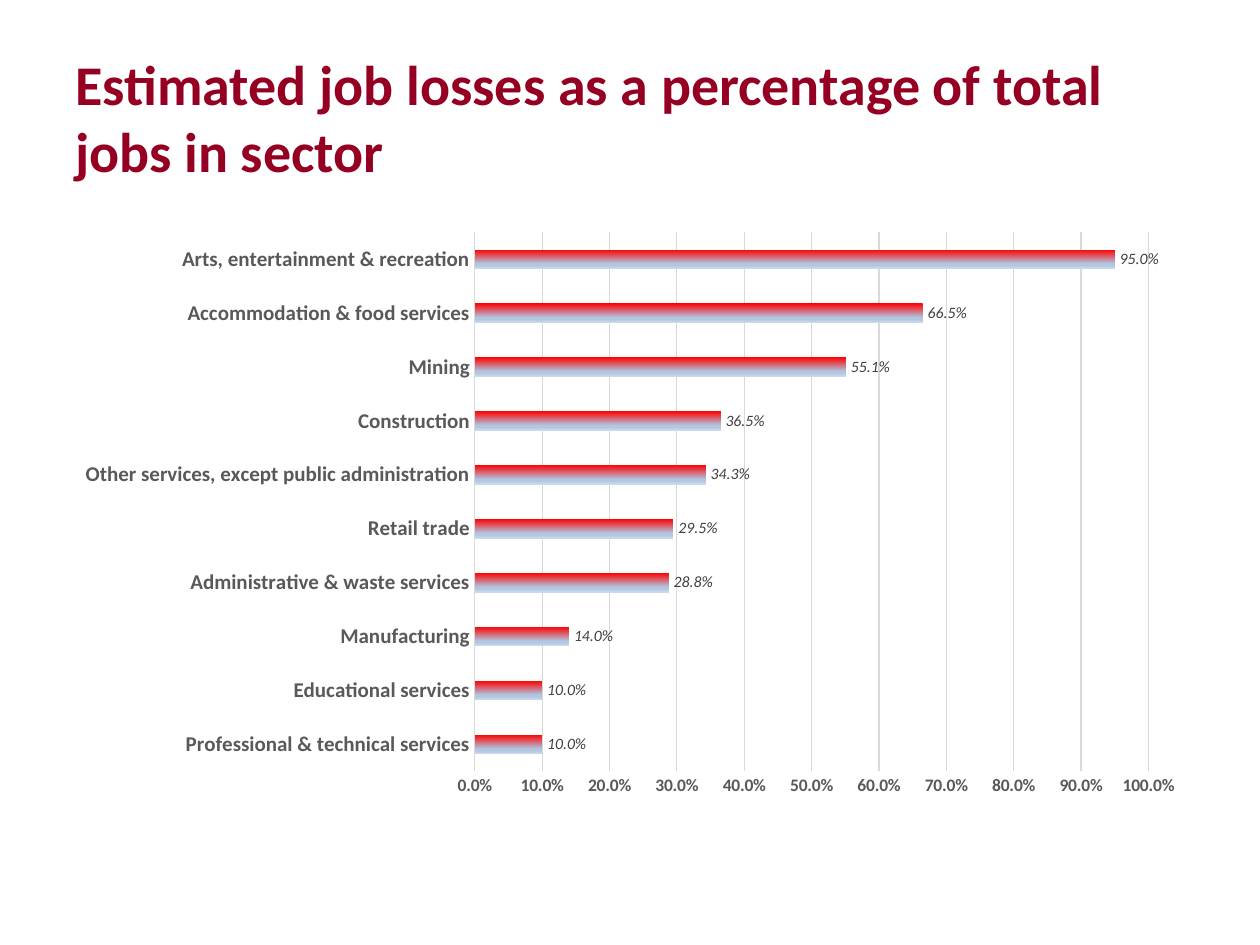
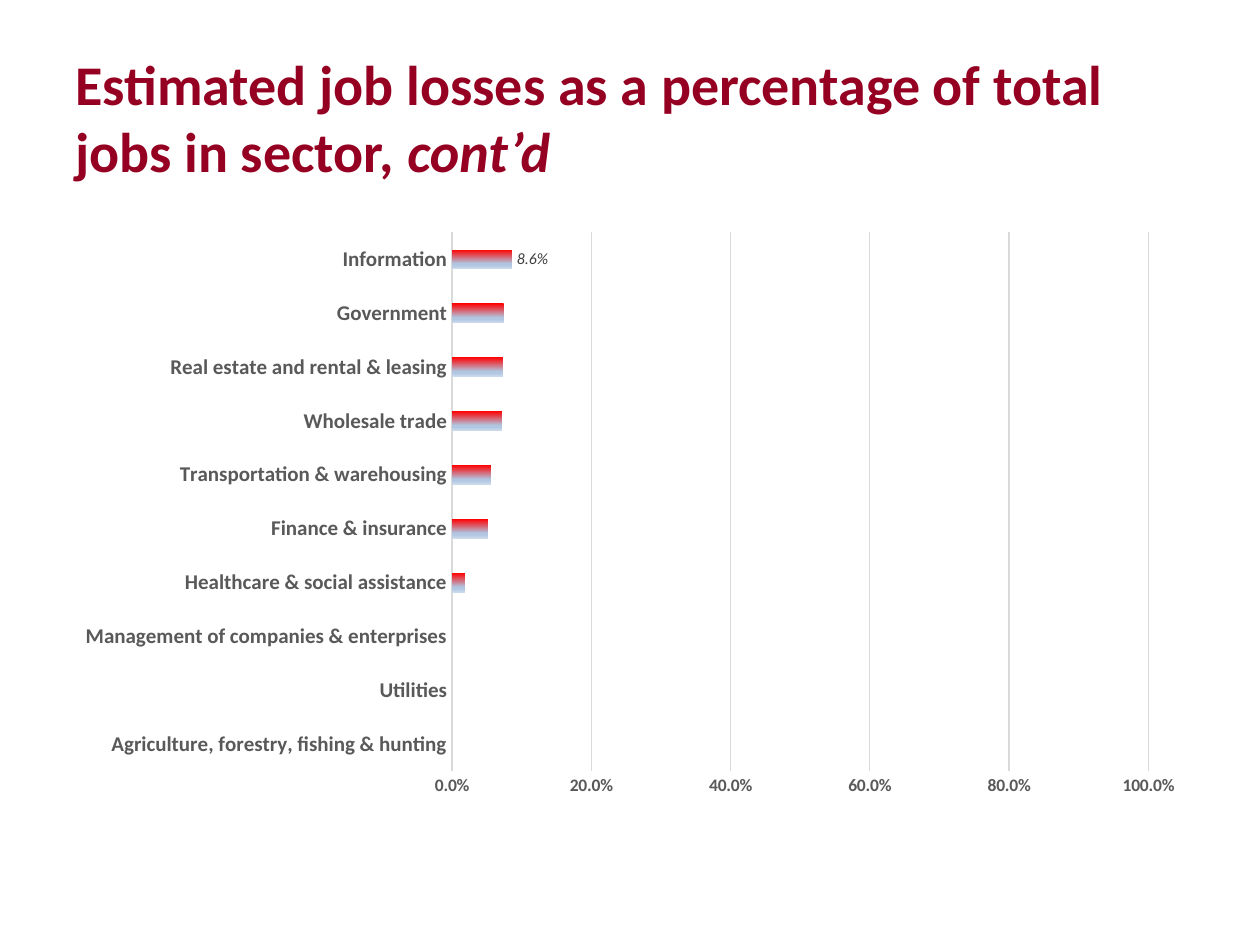
import pptx
import pptx.chart.data
import pptx.dml.color
import pptx.enum.chart
import pptx.enum.text
import pptx.oxml
import pptx.oxml.ns
import pptx.util

FONT = "Calibri"
TITLE_RED = pptx.dml.color.RGBColor(0x95, 0x00, 0x22)
AXIS_GREY = pptx.dml.color.RGBColor(0x59, 0x59, 0x59)
LABEL_GREY = pptx.dml.color.RGBColor(0x40, 0x40, 0x40)
GRID_GREY = pptx.dml.color.RGBColor(0xD9, 0xD9, 0xD9)
BLACK = pptx.dml.color.RGBColor(0, 0, 0)
BAR_STOPS = [(0, "FF0000"), (74, "B0C6E1"), (83, "B0C6E1"), (100, "CAD9EB")]
PERCENT = "0.0%"
HEADING = "Estimated job losses as a percentage of total jobs in sector"

# Each slide: title ending in italics, step of the value axis, whether every bar is labelled, bars from the bottom up
SLIDES = [
    {
        "heading": HEADING, "ending": "", "step": 0.1, "label_all": True,
        "losses": {
            "Professional & technical services": 0.1,
            "Educational services": 0.1,
            "Manufacturing": 0.14,
            "Administrative & waste services": 0.288,
            "Retail trade": 0.295,
            "Other services, except public administration": 0.343,
            "Construction": 0.365,
            "Mining": 0.551,
            "Accommodation & food services": 0.665,
            "Arts, entertainment & recreation": 0.95,
        },
    },
    {
        "heading": HEADING + ", ", "ending": "cont’d", "step": 0.2, "label_all": False,
        "losses": {
            "Agriculture, forestry, fishing & hunting": 0,
            "Utilities": 0,
            "Management of companies & enterprises": 0,
            "Healthcare & social assistance": 0.018,
            "Finance & insurance": 0.052,
            "Transportation & warehousing": 0.056,
            "Wholesale trade": 0.072,
            "Real estate and rental & leasing": 0.073,
            "Government": 0.074,
            "Information": 0.086,
        },
    },
]


def style_font(font, size, color, bold=False, italic=False):
    font.name, font.size = FONT, pptx.util.Pt(size)
    font.bold, font.italic = bold, italic
    font.color.rgb = color


def add_run(paragraph, text, **text_format):
    run = paragraph.add_run()
    run.text = text
    style_font(run.font, **text_format)


presentation = pptx.Presentation()
presentation.slide_width = pptx.util.Inches(10)
presentation.slide_height = pptx.util.Inches(7.5)
margin = int(presentation.slide_width * 0.05)
content_width = presentation.slide_width - 2 * margin

for content in SLIDES:
    slide = presentation.slides.add_slide(presentation.slide_layouts[6])

    # Title
    title = slide.shapes.add_textbox(margin, pptx.util.Inches(0.3), content_width, pptx.util.Inches(1.25))
    title.text_frame.word_wrap = True
    title.text_frame.vertical_anchor = pptx.enum.text.MSO_ANCHOR.MIDDLE
    paragraph = title.text_frame.paragraphs[0]
    add_run(paragraph, content["heading"], size=32, color=TITLE_RED, bold=True)
    if content["ending"]:
        add_run(paragraph, content["ending"], size=32, color=TITLE_RED, bold=True, italic=True)

    # Bar chart
    chart_data = pptx.chart.data.CategoryChartData(number_format=PERCENT)
    chart_data.categories = list(content["losses"])
    chart_data.add_series("Series 1", list(content["losses"].values()))
    chart = slide.shapes.add_chart(
        pptx.enum.chart.XL_CHART_TYPE.BAR_CLUSTERED, margin, pptx.util.Inches(1.75),
        content_width, pptx.util.Inches(4.66), chart_data).chart
    chart.has_title = False
    chart.has_legend = False
    style_font(chart.font, 10, BLACK)

    # Axes
    sectors, shares = chart.category_axis, chart.value_axis
    for axis, size in ((sectors, 12), (shares, 10)):
        axis.major_tick_mark = axis.minor_tick_mark = pptx.enum.chart.XL_TICK_MARK.NONE
        style_font(axis.tick_labels.font, size, AXIS_GREY, bold=True)
    shares.minimum_scale, shares.maximum_scale = 0, 1
    shares.major_unit = content["step"]
    shares.tick_labels.number_format = PERCENT
    shares.tick_labels.number_format_is_linked = False
    shares.format.line.fill.background()
    for line in (sectors.format.line, shares.major_gridlines.format.line):
        line.color.rgb = GRID_GREY
        line.width = pptx.util.Pt(0.75)

    # Bars with a four-stop vertical gradient
    plot = chart.plots[0]
    plot.gap_width = 182
    plot.vary_by_categories = False
    bars = plot.series[0]
    bars.invert_if_negative = False
    bars.format.fill.gradient()
    bars.format.fill.gradient_angle = 270
    stop_list = bars.format.fill.gradient_stops[0]._gs.getparent()
    for stop in list(stop_list):
        stop_list.remove(stop)
    for position, color in BAR_STOPS:
        stop_list.append(pptx.oxml.parse_xml(
            f'<a:gs {pptx.oxml.ns.nsdecls("a")} pos="{position * 1000}"><a:srgbClr val="{color}"/></a:gs>'))

    # Value labels
    labels = bars.data_labels
    labels.show_value = content["label_all"]
    labels.number_format = PERCENT
    labels.number_format_is_linked = False
    style_font(labels.font, 9, LABEL_GREY, italic=True)
    if not content["label_all"]:
        top_label = bars.points[len(content["losses"]) - 1].data_label
        style_font(top_label.font, 9, LABEL_GREY, italic=True)
        top_label.position = pptx.enum.chart.XL_LABEL_POSITION.OUTSIDE_END

presentation.save("out.pptx")
